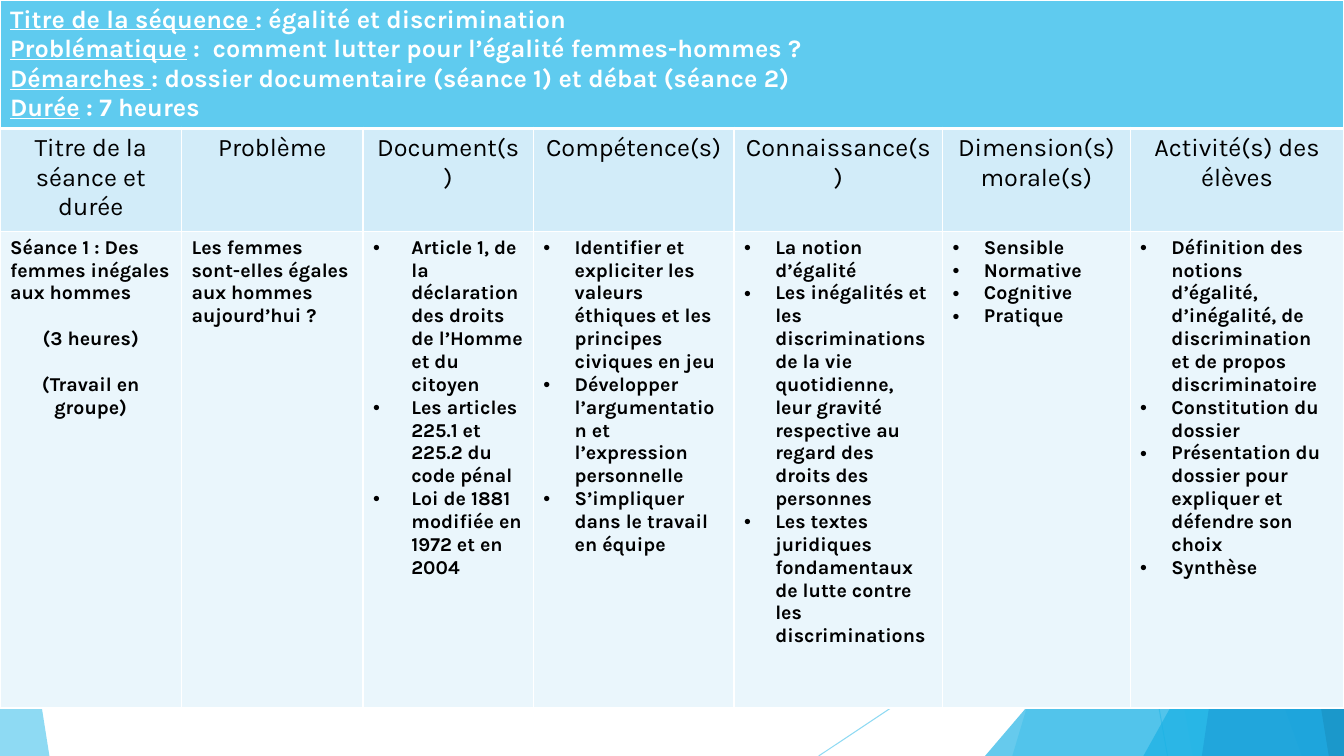
from lxml.etree import SubElement
from pptx import Presentation
from pptx.dml.color import RGBColor
from pptx.enum.shapes import MSO_CONNECTOR, MSO_SHAPE
from pptx.enum.text import PP_ALIGN
from pptx.oxml import parse_xml
from pptx.oxml.ns import nsdecls, qn
from pptx.util import Inches, Pt

FONT = "Karla"
COLORS = {"sky": "5FCBEF", "azure": "17B0E4", "blue": "2E83C3", "navy": "226292",
          "header": "D2ECF9", "body": "EAF6FC", "white": "FFFFFF", "black": "000000"}

SEQUENCE = [
    ("Titre de la séquence ", ": égalité et discrimination"),
    ("Problématique", " :  comment lutter pour l’égalité femmes-hommes ?"),
    ("Démarches ", ": dossier documentaire (séance 1) et débat (séance 2)"),
    ("Durée", " : 7 heures"),
]
SESSION = ["Séance 1 : Des femmes inégales aux hommes", "(3 heures)", "(Travail en groupe)"]
PROBLEM = "Les femmes sont-elles égales aux hommes aujourd’hui ?"
# heading, column width, bullet indent, bullets
COLUMNS = [
    ("Titre de la séance et durée", 1.8, 0, []),
    ("Problème", 1.8, 0, []),
    ("Document(s)", 1.69, 0.38, [
        "Article 1, de la déclaration des droits de l’Homme et du citoyen",
        "Les articles 225.1 et 225.2 du code pénal",
        "Loi de 1881 modifiée en 1972 et en 2004"]),
    ("Compétence(s)", 1.99, 0.31, [
        "Identifier et expliciter les valeurs éthiques et les principes civiques en jeu",
        "Développer l’argumentation et l’expression personnelle",
        "S’impliquer dans le travail en équipe"]),
    ("Connaissance(s)", 2.07, 0.31, [
        "La notion d’égalité",
        "Les inégalités et les discriminations de la vie quotidienne, leur gravité "
        "respective au regard des droits des personnes",
        "Les textes juridiques fondamentaux de lutte contre les discriminations"]),
    ("Dimension(s) morale(s)", 1.86, 0.31, ["Sensible", "Normative", "Cognitive", "Pratique"]),
    ("Activité(s) des élèves", 2.12, 0.31, [
        "Définition des notions d’égalité, d’inégalité, de discrimination et de propos "
        "discriminatoire",
        "Constitution du dossier",
        "Présentation du dossier pour expliquer et défendre son choix",
        "Synthèse"]),
]
ROW_HEIGHTS = [1.27, 1.02, 4.73]

WIDTH, HEIGHT = 13.33, 7.5
RAYS = [((10.25, 0), (11.58, HEIGHT)), ((WIDTH, 4.03), (8.12, HEIGHT))]
# Bands reach the right edge: top-left x, bottom-left x, colour, opacity.
# Triangles: left, top, width, corner adjustment, colour, opacity.
FACETS = [
    ("band", 12.28, 10.04, "sky", 36),
    ("band", 10.5, 11.83, "sky", 20),
    ("triangle", 9.77, 3.33, 3.56, 1, "azure", 66),
    ("band", 10.21, 12.91, "azure", 50),
    ("band", 13.03, 11.92, "blue", 70),
    ("band", 11.96, 13.18, "navy", 80),
    ("triangle", 11.34, 3.93, 1.99, 1, "azure", 66),
    ("triangle", 0, 4.39, 0.49, 0, "sky", 70),
]


def rgb(name):
    return RGBColor.from_string(COLORS[name])


def set_opacity(element, percent):
    color = next(element.iter(qn("a:srgbClr")))
    SubElement(color, qn("a:alpha"), val=str(percent * 1000))


def add_ray(slide, start, end):
    line = slide.shapes.add_connector(MSO_CONNECTOR.STRAIGHT, *map(Inches, start + end))
    line.line.color.rgb = rgb("sky")
    line.line.width = Pt(0.75)
    properties = line._element.spPr
    set_opacity(properties, 70)
    SubElement(properties, qn("a:effectLst"))


def add_facet(slide, kind, *geometry):
    *numbers, color, opacity = geometry
    if kind == "band":
        top_x, bottom_x = numbers
        points = [(Inches(x), Inches(y)) for x, y in
                  [(top_x, 0), (WIDTH, 0), (WIDTH, HEIGHT), (bottom_x, HEIGHT)]]
        builder = slide.shapes.build_freeform(*points[0])
        builder.add_line_segments(points[1:], close=True)
        shape = builder.convert_to_shape()
    else:
        left, top, width, corner = numbers
        shape = slide.shapes.add_shape(MSO_SHAPE.ISOSCELES_TRIANGLE,
                                       *map(Inches, (left, top, width, HEIGHT - top)))
        shape.adjustments[0] = corner
    shape.shadow.inherit = False
    shape.line.fill.background()
    shape.fill.solid()
    shape.fill.fore_color.rgb = rgb(color)
    set_opacity(shape._element.spPr, opacity)


def add_text(cell, text, size=14, bold=True, color="black", underline=False,
             align=PP_ALIGN.LEFT, indent=0, space_before=0, new_paragraph=True):
    """Write a run in a new paragraph, or in the last one if new_paragraph is False."""
    frame = cell.text_frame
    paragraph = frame.paragraphs[-1]
    if new_paragraph and paragraph.runs:
        paragraph = frame.add_paragraph()
    paragraph.alignment = align
    paragraph.space_before = Pt(space_before)
    if indent:
        properties = paragraph._p.get_or_add_pPr()
        properties.set("marL", str(Inches(indent)))
        properties.set("indent", str(-Inches(indent)))
        SubElement(properties, qn("a:buFont"), typeface="Arial")
        SubElement(properties, qn("a:buChar"), char="•")
    run = paragraph.add_run()
    run.text = text
    font = run.font
    font.name, font.size, font.bold, font.underline = FONT, Pt(size), bold, underline
    font.color.rgb = rgb(color)


def style_cell(cell, fill, top=1, bottom=1):
    cell.fill.solid()
    cell.fill.fore_color.rgb = rgb(fill)
    properties = cell._tc.get_or_add_tcPr()
    for index, (side, width) in enumerate([("L", 1), ("R", 1), ("T", top), ("B", bottom)]):
        properties.insert(index, parse_xml(
            f'<a:ln{side} {nsdecls("a")} w="{Pt(width)}"><a:solidFill>'
            f'<a:srgbClr val="{COLORS["white"]}"/></a:solidFill></a:ln{side}>'))


def add_plan(slide):
    table = slide.shapes.add_table(len(ROW_HEIGHTS), len(COLUMNS), 0, 0, Inches(WIDTH),
                                   Inches(sum(ROW_HEIGHTS))).table
    for row, height in zip(table.rows, ROW_HEIGHTS):
        row.height = Inches(height)
    for index, (heading, width, indent, bullets) in enumerate(COLUMNS):
        table.columns[index].width = Inches(width)
        style_cell(table.cell(0, index), "sky", bottom=3)
        style_cell(table.cell(1, index), "header", top=3)
        style_cell(table.cell(2, index), "body")
        add_text(table.cell(1, index), heading, size=18, bold=False, align=PP_ALIGN.CENTER)
        for bullet in bullets:
            add_text(table.cell(2, index), bullet, indent=indent)

    title = table.cell(0, 0)
    title.merge(table.cell(0, len(COLUMNS) - 1))
    for label, value in SEQUENCE:
        add_text(title, label, size=18, color="white", underline=True)
        add_text(title, value, size=18, color="white", new_paragraph=False)

    session, *details = SESSION
    add_text(table.cell(2, 0), session)
    for detail in details:
        add_text(table.cell(2, 0), detail, align=PP_ALIGN.CENTER, space_before=16.4)
    add_text(table.cell(2, 1), PROBLEM)


def main():
    presentation = Presentation()
    presentation.slide_width, presentation.slide_height = Inches(WIDTH), Inches(HEIGHT)
    slide = presentation.slides.add_slide(presentation.slide_layouts[6])
    for start, end in RAYS:
        add_ray(slide, start, end)
    for facet in FACETS:
        add_facet(slide, *facet)
    add_plan(slide)
    presentation.save("out.pptx")


if __name__ == "__main__":
    main()
